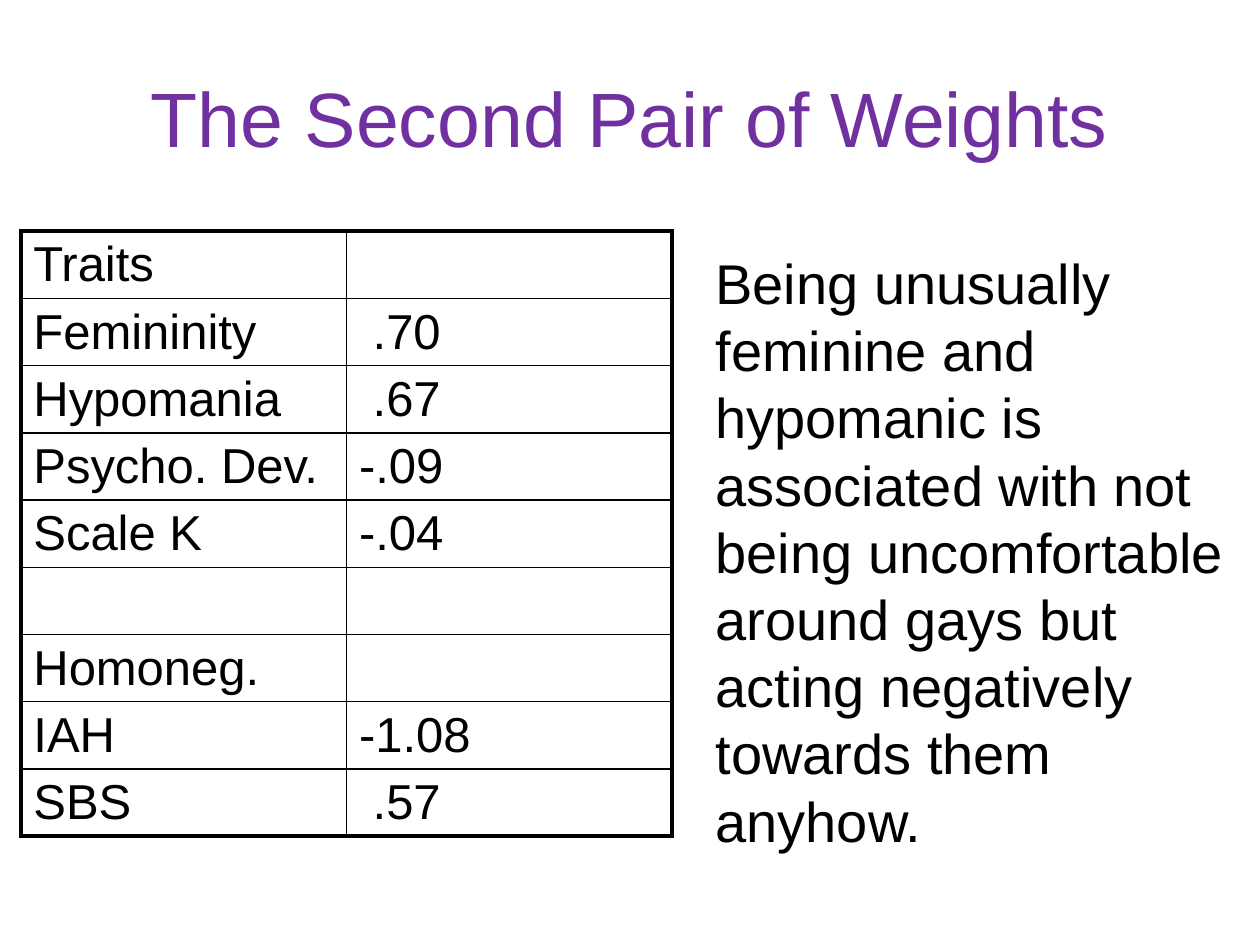
import dataclasses

import lxml.etree
import pptx
import pptx.dml.color
import pptx.enum.text
import pptx.oxml.ns
import pptx.util

Cm = pptx.util.Cm
Pt = pptx.util.Pt


@dataclasses.dataclass(frozen=True)
class Theme:
    font: str = "Arial"
    title_color: str = "7030A0"
    ink: str = "000000"
    title_size: int = 44
    body_size: int = 32
    table_size: int = 28
    outer_line: float = 2.25
    inner_line: float = 1


class SlideBuilder:
    def __init__(self, deck, theme):
        self.theme = theme
        self.slide = deck.slides.add_slide(deck.slide_layouts[1])

    def add_run(self, para, text, size, color):
        span = para.add_run()
        span.text = text
        span.font.name = self.theme.font
        span.font.size = Pt(size)
        span.font.color.rgb = pptx.dml.color.RGBColor.from_string(color)

    def place(self, box, left, top, width, height):
        box.left, box.top = Cm(left), Cm(top)
        box.width, box.height = Cm(width), Cm(height)

    def title(self, text, *position):
        box = self.slide.shapes.title
        self.place(box, *position)
        box.text_frame.vertical_anchor = pptx.enum.text.MSO_ANCHOR.MIDDLE
        para = box.text_frame.paragraphs[0]
        para.alignment = pptx.enum.text.PP_ALIGN.CENTER
        self.add_run(para, text, self.theme.title_size, self.theme.title_color)

    def body(self, text, *position):
        box = self.slide.placeholders[1]
        self.place(box, *position)
        box.text_frame.auto_size = pptx.enum.text.MSO_AUTO_SIZE.SHAPE_TO_FIT_TEXT
        para = box.text_frame.paragraphs[0]
        para.space_before = Pt(0)
        # Plain paragraph without bullet or hanging indent
        properties = para._p.get_or_add_pPr()
        properties.set("marL", "0")
        properties.set("indent", "0")
        lxml.etree.SubElement(properties, pptx.oxml.ns.qn("a:buNone"))
        self.add_run(para, text, self.theme.body_size, self.theme.ink)

    def border(self, cell, side, width):
        qn = pptx.oxml.ns.qn
        line = lxml.etree.SubElement(cell._tc.get_or_add_tcPr(), qn(f"a:ln{side}"), w=str(Pt(width)))
        fill = lxml.etree.SubElement(line, qn("a:solidFill"))
        lxml.etree.SubElement(fill, qn("a:srgbClr"), val=self.theme.ink)

    def table(self, rows, left, top, width, height):
        row_count, column_count = len(rows), len(rows[0])
        table = self.slide.shapes.add_table(
            row_count, column_count, Cm(left), Cm(top), Cm(width), Cm(height)
        ).table
        table.first_row = table.horz_banding = False
        for r, row in enumerate(rows):
            for c, text in enumerate(row):
                cell = table.cell(r, c)
                cell.margin_top, cell.margin_bottom = Cm(0.13), Cm(0.03)
                # Heavy lines on the outside, thin ones between cells
                outside = {"L": c == 0, "R": c == column_count - 1,
                           "T": r == 0, "B": r == row_count - 1}
                for side, is_outer in outside.items():
                    self.border(cell, side, self.theme.outer_line if is_outer else self.theme.inner_line)
                cell.fill.background()
                if text:
                    self.add_run(cell.text_frame.paragraphs[0], text,
                                 self.theme.table_size, self.theme.ink)


WEIGHTS = [
    ("Traits", ""),
    ("Femininity", " .70"),
    ("Hypomania", " .67"),
    ("Psycho. Dev.", "-.09"),
    ("Scale K", "-.04"),
    ("", ""),
    ("Homoneg.", ""),
    ("IAH", "-1.08"),
    ("SBS", " .57"),
]


def main():
    deck = pptx.Presentation()
    deck.slide_width, deck.slide_height = Cm(25.4), Cm(19.05)
    page = SlideBuilder(deck, Theme())

    # Heading
    page.title("The Second Pair of Weights", 1.27, 0.76, 22.86, 3.18)
    # Weights on the left
    page.table(WEIGHTS, 0.42, 4.66, 13.13, 12.2)
    # Interpretation on the right
    page.body(
        "Being unusually feminine and hypomanic is associated with not being "
        "uncomfortable around gays but acting negatively towards them anyhow.",
        14.17, 4.88, 11.23, 12.45,
    )
    deck.save("out.pptx")


if __name__ == "__main__":
    main()
